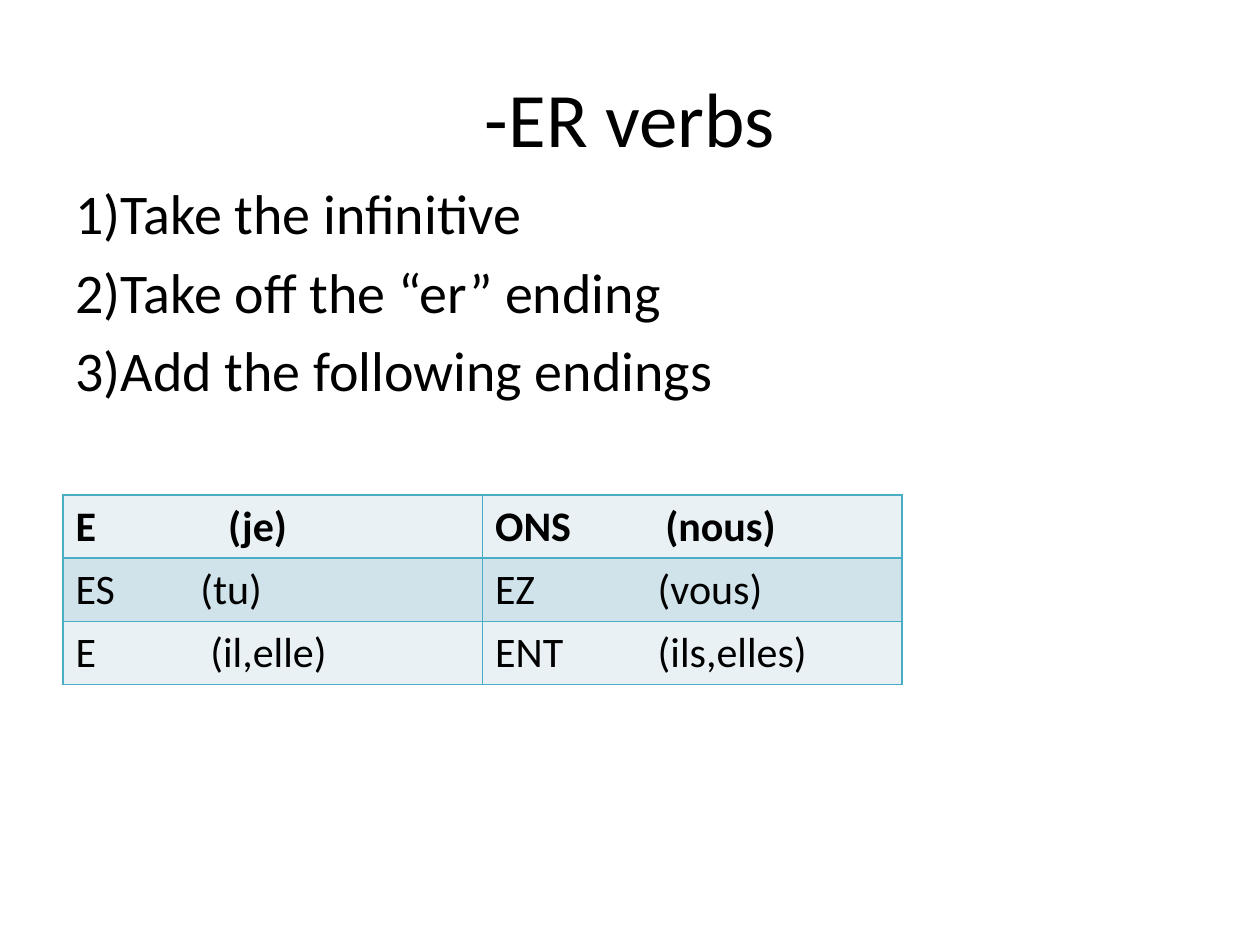
import pptx
import pptx.dml.color
import pptx.enum.text
import pptx.oxml.ns
import pptx.util
from lxml import etree

Inches, Pt = pptx.util.Inches, pptx.util.Pt
ALIGN, ANCHOR = pptx.enum.text.PP_ALIGN, pptx.enum.text.MSO_ANCHOR
qn = pptx.oxml.ns.qn

# Content
TITLE = "-ER verbs"
STEPS = [
    "1)Take the infinitive",
    "2)Take off the “er” ending",
    "3)Add the following endings",
]
# Each cell: ending, pronoun, inches from the ending to the pronoun
ENDINGS = [
    [("E", "(je)", 1.21), ("ONS", "(nous)", 1.35)],
    [("ES", "(tu)", 0.99), ("EZ", "(vous)", 1.29)],
    [("E", "(il,elle)", 1.07), ("ENT", "(ils,elles)", 1.29)],
]
COLORS = {"text": "000000", "light": "E9F1F5", "dark": "D0E3EA", "border": "4BACC6"}
LEFT, WIDTH = 0.5, 9
COLUMN_WIDTH, ROW_HEIGHT = 3.33, 0.5


def rgb(name):
    return pptx.dml.color.RGBColor.from_string(COLORS[name])


def write(frame, lines, size, bold=False, align=ALIGN.LEFT, anchor=ANCHOR.TOP,
          before=0, hanging=0, tab=None):
    frame.word_wrap = True
    frame.vertical_anchor = anchor
    for number, line in enumerate(lines):
        paragraph = frame.add_paragraph() if number else frame.paragraphs[0]
        paragraph.alignment = align
        paragraph.space_before = Pt(before)
        properties = paragraph._p.get_or_add_pPr()
        if hanging:
            properties.set("marL", str(Inches(hanging)))
            properties.set("indent", str(-Inches(hanging)))
        if tab:
            stops = etree.SubElement(properties, qn("a:tabLst"))
            etree.SubElement(stops, qn("a:tab"), pos=str(Inches(tab)), algn="l")
        run = paragraph.add_run()
        run.text = line
        run.font.name = "Calibri"
        run.font.size = Pt(size)
        run.font.bold = bold
        run.font.color.rgb = rgb("text")


def add_borders(cell):
    properties = cell._tc.get_or_add_tcPr()
    for position, side in enumerate(("lnL", "lnR", "lnT", "lnB")):
        line = etree.Element(qn(f"a:{side}"), w=str(Pt(1)))
        fill = etree.SubElement(line, qn("a:solidFill"))
        etree.SubElement(fill, qn("a:srgbClr"), val=COLORS["border"])
        properties.insert(position, line)


prs = pptx.Presentation()
prs.slide_width, prs.slide_height = Inches(10), Inches(7.5)
slide = prs.slides.add_slide(prs.slide_layouts[6])

# Title
title = slide.shapes.add_textbox(Inches(LEFT), Inches(0.3), Inches(WIDTH), Inches(1.25))
write(title.text_frame, [TITLE], 44, align=ALIGN.CENTER, anchor=ANCHOR.MIDDLE)

# Steps
steps = slide.shapes.add_textbox(Inches(LEFT), Inches(1.37), Inches(WIDTH), Inches(5.33))
write(steps.text_frame, STEPS, 32, before=6.4, hanging=0.38)

# Table of endings
rows, columns = len(ENDINGS), len(ENDINGS[0])
endings = slide.shapes.add_table(
    rows, columns, Inches(LEFT), Inches(3.93),
    Inches(columns * COLUMN_WIDTH), Inches(rows * ROW_HEIGHT)).table
for r, row in enumerate(ENDINGS):
    for c, (ending, pronoun, gap) in enumerate(row):
        cell = endings.cell(r, c)
        write(cell.text_frame, [f"{ending}\t{pronoun}"], 24, bold=r == 0, tab=gap)
        cell.fill.solid()
        cell.fill.fore_color.rgb = rgb("dark" if r % 2 else "light")
        add_borders(cell)

prs.save("out.pptx")
